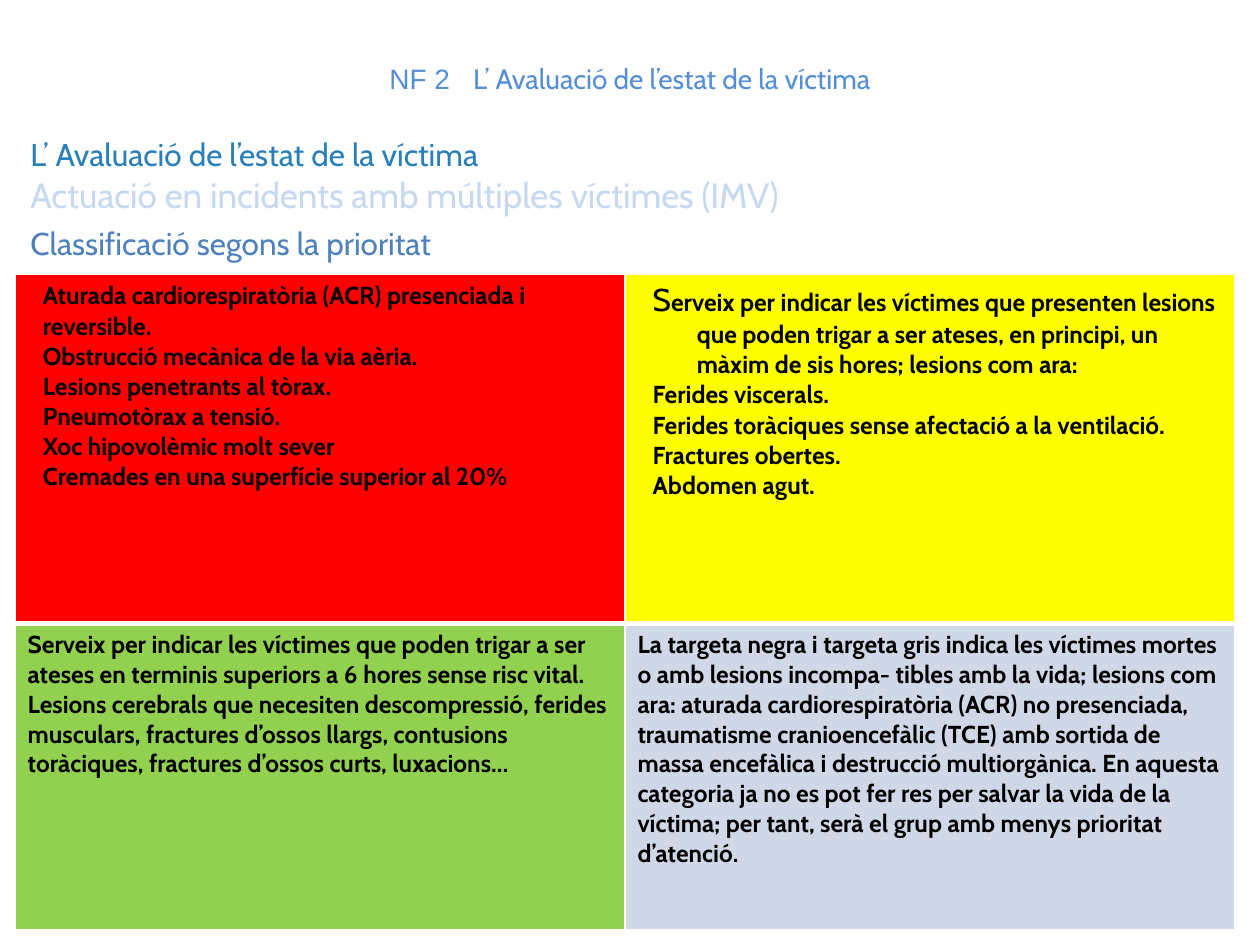
from dataclasses import dataclass

from lxml import etree
from pptx import Presentation
from pptx.dml.color import RGBColor
from pptx.enum.text import MSO_ANCHOR, MSO_AUTO_SIZE, PP_ALIGN
from pptx.oxml.ns import qn
from pptx.util import Inches, Pt

CENTER, LEFT = PP_ALIGN.CENTER, PP_ALIGN.LEFT
MIDDLE, TOP = MSO_ANCHOR.MIDDLE, MSO_ANCHOR.TOP
NO_AUTOFIT = MSO_AUTO_SIZE.NONE

BLACK = RGBColor(0x00, 0x00, 0x00)
TITLE_BLUE = RGBColor(0x55, 0x8E, 0xD5)
UNIT_BLUE = RGBColor(0x29, 0x80, 0xB9)
PALE_BLUE = RGBColor(0xC6, 0xD9, 0xF1)
SECTION_BLUE = RGBColor(0x4F, 0x81, 0xBD)
RED = RGBColor(0xFF, 0x00, 0x00)
YELLOW = RGBColor(0xFF, 0xFF, 0x00)
GREEN = RGBColor(0x92, 0xD0, 0x50)
GREY = RGBColor(0xD0, 0xD8, 0xE8)

UNIT = "L’ Avaluació de l’estat de la víctima"
COLUMN_WIDTH = 4.84
ROW_HEIGHTS = (2.77, 2.43)


@dataclass
class Heading:
    text: str
    size: int
    color: RGBColor
    space_before: int = 0


@dataclass
class Priority:
    fill: RGBColor
    lines: list[str]
    indent: float = 0
    line_spacing: float = 1.0
    hanging_lead: bool = False  # large first letter and hanging first paragraph


HEADINGS = [
    Heading(UNIT, 18, UNIT_BLUE),
    Heading("Actuació en incidents amb múltiples víctimes (IMV)", 20, PALE_BLUE),
    Heading("Classificació segons la prioritat", 18, SECTION_BLUE, 5),
]

PRIORITIES = [
    [
        Priority(RED, [
            "Aturada cardiorespiratòria (ACR) presenciada i reversible.",
            "Obstrucció mecànica de la via aèria.",
            "Lesions penetrants al tòrax.",
            "Pneumotòrax a tensió.",
            "Xoc hipovolèmic molt sever",
            "Cremades en una superfície superior al 20%",
        ], 0.12, 1.01),
        Priority(YELLOW, [
            "Serveix per indicar les víctimes que presenten lesions que poden "
            "trigar a ser ateses, en principi, un màxim de sis hores; lesions com ara:",
            "Ferides viscerals.",
            "Ferides toràciques sense afectació a la ventilació.",
            "Fractures obertes.",
            "Abdomen agut.",
        ], 0.12, 1.01, hanging_lead=True),
    ],
    [
        Priority(GREEN, [
            "Serveix per indicar les víctimes que poden trigar a ser ateses en "
            "terminis superiors a 6 hores sense risc vital.",
            "Lesions cerebrals que necesiten descompressió, ferides musculars, "
            "fractures d’ossos llargs, contusions toràciques, fractures d’ossos "
            "curts, luxacions…",
        ]),
        Priority(GREY, [
            "La targeta negra i targeta gris indica les víctimes mortes o amb "
            "lesions incompa- tibles amb la vida; lesions com ara: aturada "
            "cardiorespiratòria (ACR) no presenciada, traumatisme cranioencefàlic "
            "(TCE) amb sortida de massa encefàlica i destrucció multiorgànica. "
            "En aquesta categoria ja no es pot fer res per salvar la vida de la "
            "víctima; per tant, serà el grup amb menys prioritat d’atenció.",
        ]),
    ],
]


def add_text(paragraph, text: str, *, size: float = 14, color: RGBColor = BLACK,
             bold: bool = False, font: str = "Cabin", tracking: float = 0) -> None:
    run = paragraph.add_run()
    run.text = text
    run.font.size = Pt(size)
    run.font.name = font
    run.font.bold = bold
    run.font.color.rgb = color
    if tracking:
        run.font._element.set("spc", str(round(tracking * 100)))


def format_paragraph(paragraph, *, margin: float = 0, indent: float = 0,
                     line_spacing: float = 1.0, before: float = 0,
                     align: PP_ALIGN = LEFT) -> None:
    paragraph.alignment = align
    paragraph.line_spacing = line_spacing
    paragraph.space_before = Pt(before)
    properties = paragraph._p.get_or_add_pPr()
    properties.set("marL", str(Inches(margin)))
    properties.set("indent", str(Inches(indent)))
    etree.SubElement(properties, qn("a:buNone"))


def next_paragraph(frame, index: int):
    return frame.paragraphs[0] if index == 0 else frame.add_paragraph()


def place(placeholder, left: float, top: float, width: float, height: float,
          anchor: MSO_ANCHOR):
    placeholder.left, placeholder.top = Inches(left), Inches(top)
    placeholder.width, placeholder.height = Inches(width), Inches(height)
    frame = placeholder.text_frame
    frame.auto_size = NO_AUTOFIT
    frame.vertical_anchor = anchor
    return frame


def add_border(cell, side: str, width: float) -> None:
    line = etree.SubElement(cell._tc.get_or_add_tcPr(), qn(f"a:ln{side}"),
                            w=str(Pt(width)))
    fill = etree.SubElement(line, qn("a:solidFill"))
    etree.SubElement(fill, qn("a:srgbClr"), val="FFFFFF")


def fill_cell(cell, priority: Priority, row: int) -> None:
    # Borders come before the fill; the line between the rows is thicker
    widths = {"L": 1, "R": 1, "T": 3 if row == 1 else 1, "B": 3 if row == 0 else 1}
    for side, width in widths.items():
        add_border(cell, side, width)
    cell.fill.solid()
    cell.fill.fore_color.rgb = priority.fill
    cell.vertical_anchor = TOP

    for index, text in enumerate(priority.lines):
        paragraph = next_paragraph(cell.text_frame, index)
        hanging = 0.35 if priority.hanging_lead and index == 0 else 0
        format_paragraph(paragraph, margin=priority.indent + hanging,
                         indent=-hanging, line_spacing=priority.line_spacing)
        if hanging:
            add_text(paragraph, text[0], size=18)
            text = text[1:]
        add_text(paragraph, text, bold=True)


def main() -> None:
    deck = Presentation()
    deck.slide_width, deck.slide_height = Inches(10), Inches(7.5)
    slide = deck.slides.add_slide(deck.slide_layouts[1])

    # Title: the space after the number is widened by tracking
    title = place(slide.shapes.title, 0.5, 0.3, 9, 0.64, MIDDLE).paragraphs[0]
    format_paragraph(title, align=CENTER)
    add_text(title, "NF 2", size=16, color=TITLE_BLUE, font="Arial")
    add_text(title, " ", size=16, color=TITLE_BLUE, font="Arial", tracking=8.9)
    add_text(title, UNIT, size=16, color=TITLE_BLUE)

    # Headings above the table
    body = place(slide.placeholders[1], 0, 1.02, 10, 6.48, TOP)
    for index, heading in enumerate(HEADINGS):
        paragraph = next_paragraph(body, index)
        format_paragraph(paragraph, margin=0.49, indent=-0.35, line_spacing=1.01,
                         before=heading.space_before)
        add_text(paragraph, heading.text, size=heading.size, color=heading.color)

    # Priority table
    table = slide.shapes.add_table(2, 2, Inches(0.12), Inches(2.18),
                                   Inches(2 * COLUMN_WIDTH),
                                   Inches(sum(ROW_HEIGHTS))).table
    table.first_row = table.horz_banding = False
    for column in table.columns:
        column.width = Inches(COLUMN_WIDTH)
    for row, priorities in enumerate(PRIORITIES):
        table.rows[row].height = Inches(ROW_HEIGHTS[row])
        for column, priority in enumerate(priorities):
            fill_cell(table.cell(row, column), priority, row)

    deck.save("out.pptx")


if __name__ == "__main__":
    main()
